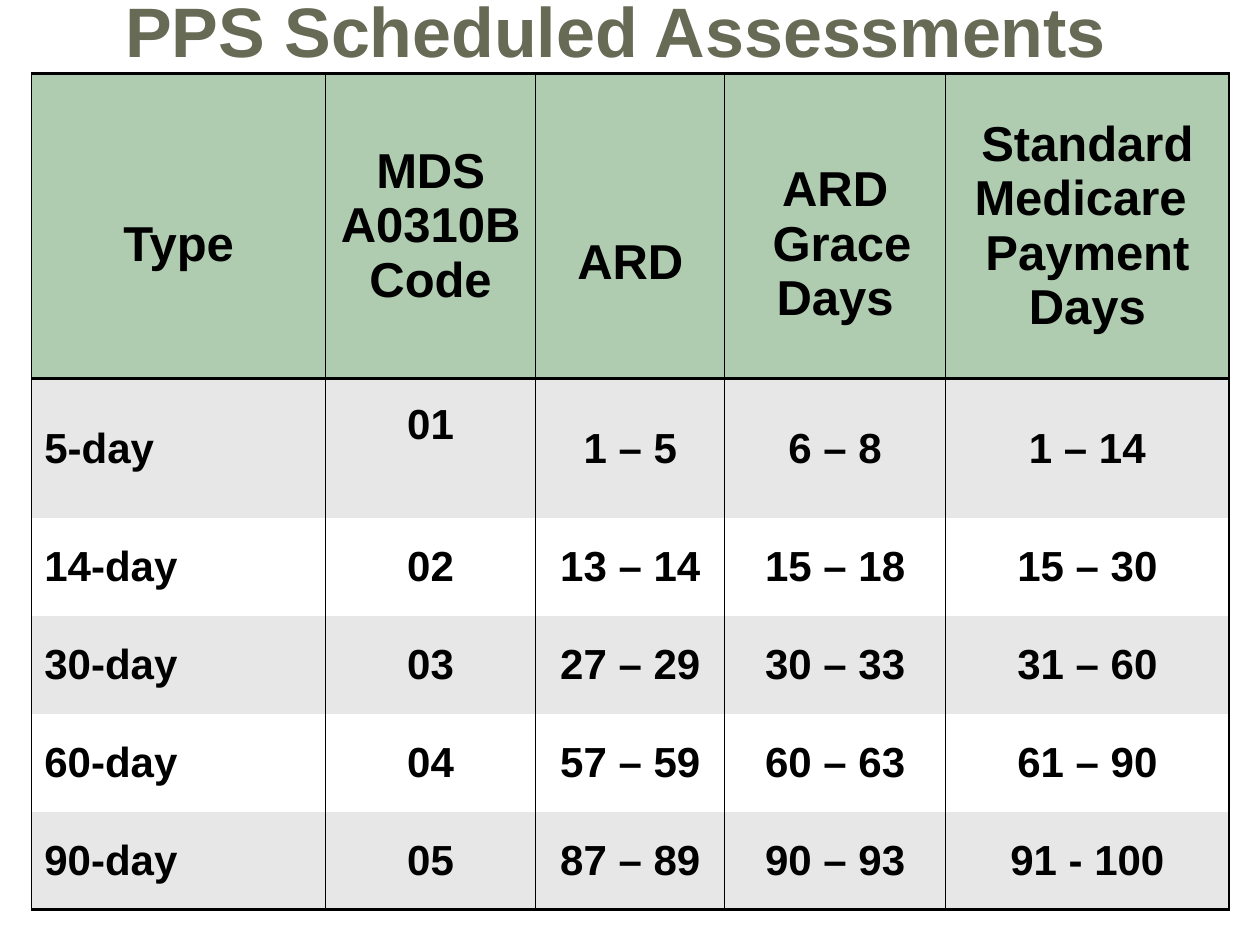
from pptx import Presentation
from pptx.dml.color import RGBColor
from pptx.enum.text import MSO_ANCHOR, MSO_AUTO_SIZE, PP_ALIGN
from pptx.oxml.ns import qn
from pptx.util import Cm, Pt
from lxml.etree import SubElement

OLIVE = RGBColor(0x67, 0x6A, 0x55)
GREEN = RGBColor(0xB0, 0xCC, 0xB0)
GRAY = RGBColor(0xE7, 0xE7, 0xE7)
WHITE = RGBColor(0xFF, 0xFF, 0xFF)
BLACK = RGBColor(0, 0, 0)
FONT = "Arial"

COL_WIDTHS = [5.92, 4.24, 3.81, 4.45, 5.72]
ROW_HEIGHTS = [6.15, 2.82] + [1.97] * 4
ROWS = [
    ["Type", "MDS A0310B\nCode", "ARD", "ARD\n Grace Days",
     "Standard Medicare \nPayment Days"],
    ["5-day", "01", "1 – 5", "6 – 8", "1 – 14"],
    ["14-day", "02", "13 – 14", "15 – 18", "15 – 30"],
    ["30-day", "03", "27 – 29", "30 – 33", "31 – 60"],
    ["60-day", "04", "57 – 59", "60 – 63", "61 – 90"],
    ["90-day", "05", "87 – 89", "90 – 93", "91 - 100"],
]
# Cell margins that move text off the vertical middle
TOP_MARGINS = {(0, 0): 0.86, (0, 2): 1.59, (0, 3): 0.86}
BOTTOM_MARGINS = {(1, 1): 1.06}


def format_paragraph(p, size, color, align):
    p.alignment = align
    for r in p.runs:
        r.font.name = FONT
        r.font.size = Pt(size)
        r.font.bold = True
        r.font.color.rgb = color


def set_border(cell, side, width):
    """Draw one black cell edge, or none when width is 0."""
    ln = SubElement(cell._tc.get_or_add_tcPr(), qn(f"a:ln{side}"),
                    w=str(Pt(width)))
    if width:
        fill = SubElement(ln, qn("a:solidFill"))
        SubElement(fill, qn("a:srgbClr"), val=str(BLACK))
    else:
        SubElement(ln, qn("a:noFill"))


def add_title(slide, left, top, width, height):
    title = slide.shapes.title
    title.left, title.top, title.width, title.height = left, top, width, height
    tf = title.text_frame
    tf.text = "PPS Scheduled Assessments "
    tf.word_wrap = True
    tf.auto_size = MSO_AUTO_SIZE.NONE
    tf.vertical_anchor = MSO_ANCHOR.BOTTOM
    tf.margin_bottom = Cm(0.25)
    format_paragraph(tf.paragraphs[0], 40, OLIVE, PP_ALIGN.CENTER)


def fill_cell(cell, row, col, text):
    header = row == 0
    last = row == len(ROWS) - 1
    # Borders: thin columns, thick lines around the header and at the foot
    widths = {"L": 1, "R": 1, "T": 2 if row < 2 else 0,
              "B": 2 if header or last else 0}
    for side, width in widths.items():
        set_border(cell, side, width)
    cell.fill.solid()
    cell.fill.fore_color.rgb = GREEN if header else GRAY if row % 2 else WHITE
    # Text
    cell.text = text
    cell.vertical_anchor = MSO_ANCHOR.MIDDLE
    cell.margin_top = Cm(TOP_MARGINS.get((row, col), 0.13))
    cell.margin_bottom = Cm(BOTTOM_MARGINS.get((row, col), 0.13))
    align = PP_ALIGN.CENTER if header or col else PP_ALIGN.LEFT
    for p in cell.text_frame.paragraphs:
        format_paragraph(p, 28 if header else 24, BLACK, align)


def add_schedule_table(slide, left, top, width, height):
    table = slide.shapes.add_table(len(ROWS), len(COL_WIDTHS),
                                   left, top, width, height).table
    table.first_row = table.horz_banding = False
    for column, w in zip(table.columns, COL_WIDTHS):
        column.width = Cm(w)
    for row, h in zip(table.rows, ROW_HEIGHTS):
        row.height = Cm(h)
    for i, texts in enumerate(ROWS):
        for j, text in enumerate(texts):
            fill_cell(table.cell(i, j), i, j, text)


def main():
    prs = Presentation()
    prs.slide_width, prs.slide_height = Cm(25.4), Cm(19.05)
    slide = prs.slides.add_slide(prs.slide_layouts[5])
    add_title(slide, Cm(0.64), Cm(0), Cm(23.93), Cm(1.7))
    add_schedule_table(slide, Cm(0.64), Cm(1.48),
                       Cm(sum(COL_WIDTHS)), Cm(sum(ROW_HEIGHTS)))
    prs.save("out.pptx")


if __name__ == "__main__":
    main()
